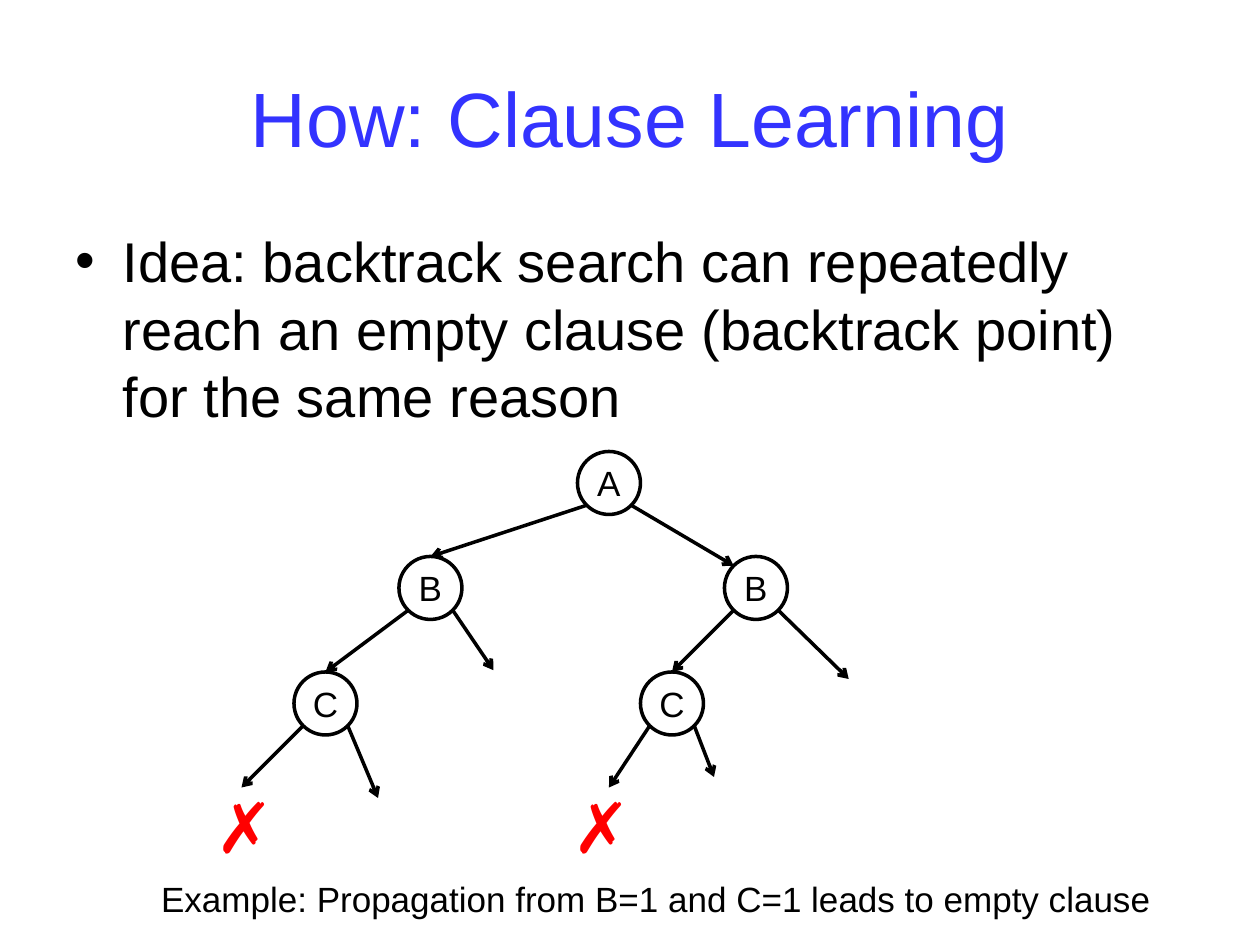
import math
from dataclasses import dataclass

import lxml.etree
import pptx
import pptx.dml.color
import pptx.enum.shapes
import pptx.enum.text
import pptx.oxml.ns
import pptx.util

Pt = pptx.util.Pt
RGB = pptx.dml.color.RGBColor
Align = pptx.enum.text.PP_ALIGN
Anchor = pptx.enum.text.MSO_ANCHOR
Fit = pptx.enum.text.MSO_AUTO_SIZE
qn = pptx.oxml.ns.qn


@dataclass(frozen=True)
class Theme:
    face: str = "Arial"
    ink: RGB = RGB(0, 0, 0)
    blue: RGB = RGB(0x33, 0x33, 0xFF)
    red: RGB = RGB(0xFF, 0, 0)
    title: int = 44
    body: int = 32
    mark: int = 40
    label: int = 20
    line: int = 2


THEME = Theme()
SIZE = 36
NODES = {
    "top": ("A", 330, 258),
    "left": ("B", 228, 318),
    "right": ("B", 414, 318),
    "low left": ("C", 168, 384),
    "low right": ("C", 366, 384),
}
EDGES = [
    ("top", "left", 0),
    ("top", "right", -1),
    ("left", "low left", 0),
    ("right", "low right", 0),
]
STUBS = [
    ("left", 1, 282, 383),
    ("right", 1, 485, 388),
    ("low left", -1, 138, 450),
    ("low left", 1, 216, 456),
    ("low right", -1, 348, 450),
    ("low right", 1, 408, 444),
]
MARKS = [(120, 444), (324, 444)]


def apply(item, values):
    for name, value in values.items():
        setattr(item, name, value)


def place(shape, x, y, w, h):
    box = {"left": x, "top": y, "width": w, "height": h}
    apply(shape, {name: Pt(value) for name, value in box.items()})


def write(shape, text, size, color, align=Align.CENTER, **frame):
    apply(shape.text_frame, {"auto_size": Fit.NONE, "word_wrap": True, **frame})
    para = shape.text_frame.paragraphs[0]
    para.alignment = align
    run = para.add_run()
    run.text = text
    apply(run.font, {"name": THEME.face, "size": Pt(size)})
    run.font.color.rgb = color


def stroke(line):
    line.color.rgb = THEME.ink
    line.width = Pt(THEME.line)


def node(slide, text, x, y):
    oval = pptx.enum.shapes.MSO_SHAPE.OVAL
    shape = slide.shapes.add_shape(oval, Pt(x), Pt(y), Pt(SIZE), Pt(SIZE))
    shape.shadow.inherit = False
    shape.fill.background()
    stroke(shape.line)
    write(shape, text, THEME.label, THEME.ink,
          word_wrap=False, vertical_anchor=Anchor.MIDDLE)


def rim(name, across, down):
    x, y = NODES[name][1:]
    half = SIZE / 2
    reach = half / math.hypot(across, down)
    return x + half + across * reach, y + half + down * reach


def arrow(slide, start, end):
    kind = pptx.enum.shapes.MSO_CONNECTOR.STRAIGHT
    ends = [Pt(value) for value in (*start, *end)]
    link = slide.shapes.add_connector(kind, *ends)
    stroke(link.line)
    props = link._element.spPr
    lxml.etree.SubElement(props.find(qn("a:ln")), qn("a:tailEnd"), type="arrow")
    lxml.etree.SubElement(props, qn("a:effectLst"))


def label(slide, text, box, size, color, **frame):
    shape = slide.shapes.add_textbox(*[Pt(value) for value in box])
    write(shape, text, size, color, **frame)


def tree(slide):
    for item in NODES.values():
        node(slide, *item)
    for start, end, across in EDGES:
        side = 1 if NODES[end][1] > NODES[start][1] else -1
        arrow(slide, rim(start, side, 1), rim(end, across, -1))
    for start, side, x, y in STUBS:
        arrow(slide, rim(start, side, 1), (x, y))
    for x, y in MARKS:
        label(slide, "✗", (x, y, 40, 55), THEME.mark, THEME.red, word_wrap=False)


def main():
    deck = pptx.Presentation()
    apply(deck, {"slide_width": Pt(720), "slide_height": Pt(540)})
    slide = deck.slides.add_slide(deck.slide_layouts[1])
    title, body = slide.placeholders
    place(title, 36, 21.6, 648, 90)
    write(title, "How: Clause Learning", THEME.title, THEME.blue,
          vertical_anchor=Anchor.MIDDLE)
    place(body, 36, 126, 648, 144)
    write(body, "Idea: backtrack search can repeatedly reach an empty clause "
          "(backtrack point) for the same reason",
          THEME.body, THEME.ink, Align.LEFT)
    tree(slide)
    label(slide, "Example: Propagation from B=1 and C=1 leads to empty clause",
          (54, 498, 642, 31), THEME.label, THEME.ink)
    deck.save("out.pptx")


if __name__ == "__main__":
    main()
